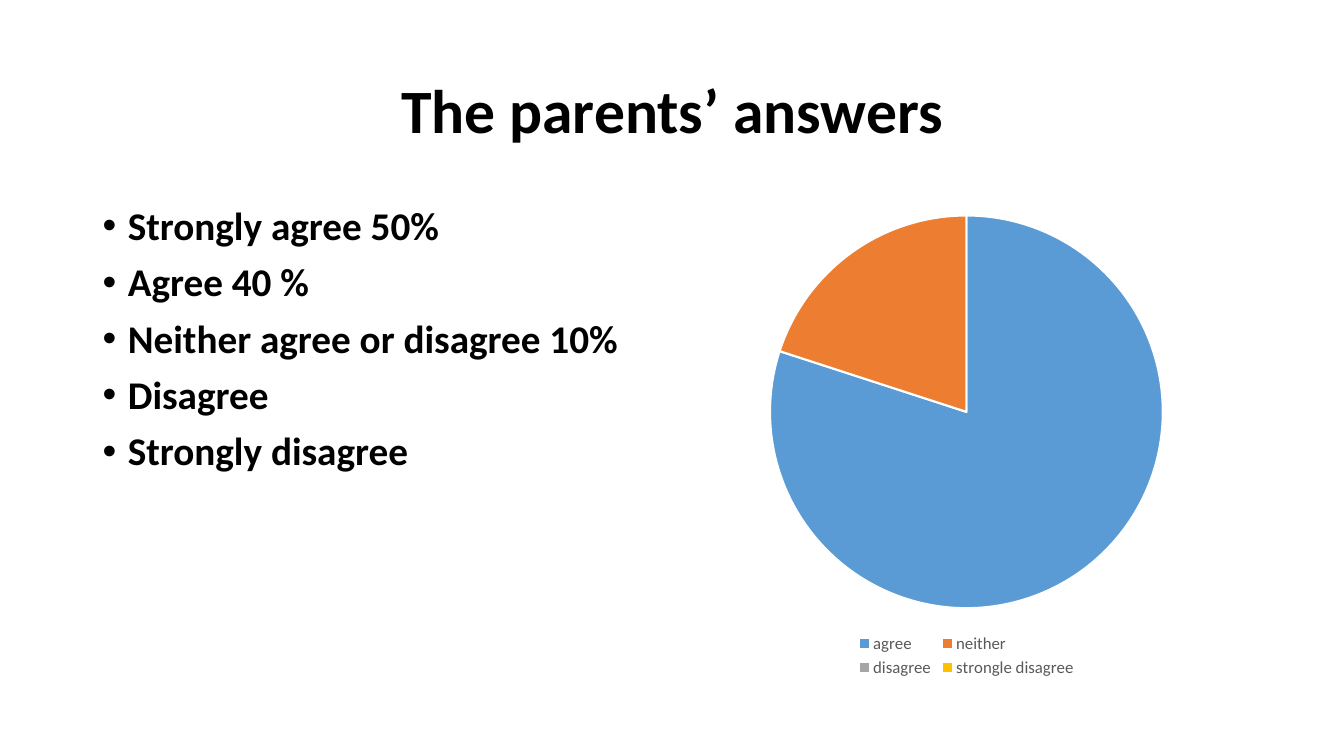
import pptx
import pptx.util
import pptx.chart.data
import pptx.dml.color
import pptx.enum.chart
import pptx.enum.text
import pptx.oxml
import pptx.oxml.ns

Inches = pptx.util.Inches
Pt = pptx.util.Pt

COLORS = {
    "text": "000000",
    "legend": "595959",
    "border": "FFFFFF",
    "agree": "5B9BD5",
    "neither": "ED7D31",
    "disagree": "A5A5A5",
    "strongle disagree": "FFC000",
}
ANSWERS = [
    "Strongly agree 50%",
    "Agree 40 %",
    "Neither agree or disagree 10%",
    "Disagree",
    "Strongly disagree",
]
SHARES = {"agree": 80, "neither": 20, "disagree": 0, "strongle disagree": 0}


def rgb(name):
    return pptx.dml.color.RGBColor.from_string(COLORS[name])


def format_font(font, size, color="text", bold=False):
    font.name = "Calibri"
    font.size = Pt(size)
    font.bold = bold
    font.color.rgb = rgb(color)


def write_paragraph(p, text, size, align="LEFT", bullet=None, before=0):
    p.alignment = getattr(pptx.enum.text.PP_ALIGN, align)
    p.line_spacing = 0.9
    p.space_before = Pt(before)
    if bullet:
        pPr = p._p.get_or_add_pPr()
        pPr.set("marL", str(Inches(0.25)))
        pPr.set("indent", str(-Inches(0.25)))
        ns = pptx.oxml.ns.nsdecls("a")
        pPr.append(pptx.oxml.parse_xml(f'<a:buFont {ns} typeface="Arial"/>'))
        pPr.append(pptx.oxml.parse_xml(f'<a:buChar {ns} char="{bullet}"/>'))
    r = p.add_run()
    r.text = text
    format_font(r.font, size, bold=True)


class SlideBuilder:
    def __init__(self, prs):
        self.s = prs.slides.add_slide(prs.slide_layouts[6])

    def text(self, box, lines, size, anchor="TOP", before=0, **style):
        sp = self.s.shapes.add_textbox(*map(Inches, box))
        tf = sp.text_frame
        tf.word_wrap = True
        tf.vertical_anchor = getattr(pptx.enum.text.MSO_ANCHOR, anchor)
        for i, line in enumerate(lines):
            p = tf.add_paragraph() if i else tf.paragraphs[0]
            write_paragraph(p, line, size, before=before if i else 0, **style)

    def pie(self, box, shares):
        data = pptx.chart.data.CategoryChartData()
        data.categories = list(shares)
        data.add_series("Series 1", list(shares.values()))
        chart = self.s.shapes.add_chart(
            pptx.enum.chart.XL_CHART_TYPE.PIE, *map(Inches, box), data).chart
        chart.has_title = False
        format_font(chart.font, 10)
        chart.has_legend = True
        chart.legend.position = pptx.enum.chart.XL_LEGEND_POSITION.BOTTOM
        chart.legend.include_in_layout = False
        format_font(chart.legend.font, 12, "legend")
        plot = chart.plots[0]
        plot.vary_by_categories = True
        for i, name in enumerate(shares):
            pie_slice = plot.series[0].points[i].format
            pie_slice.fill.solid()
            pie_slice.fill.fore_color.rgb = rgb(name)
            pie_slice.line.color.rgb = rgb("border")
            pie_slice.line.width = Pt(1.5)


def main():
    prs = pptx.Presentation()
    prs.slide_width = Inches(13.33)
    prs.slide_height = Inches(7.5)
    slide = SlideBuilder(prs)
    slide.text((0.92, 0.4, 11.5, 1.45), ["The parents’ answers"], 44,
               anchor="MIDDLE", align="CENTER")
    slide.text((0.92, 2, 5.67, 4.76), ANSWERS, 28, bullet="•", before=10)
    slide.pie((6.75, 2, 5.67, 4.76), SHARES)
    prs.save("out.pptx")


if __name__ == "__main__":
    main()
